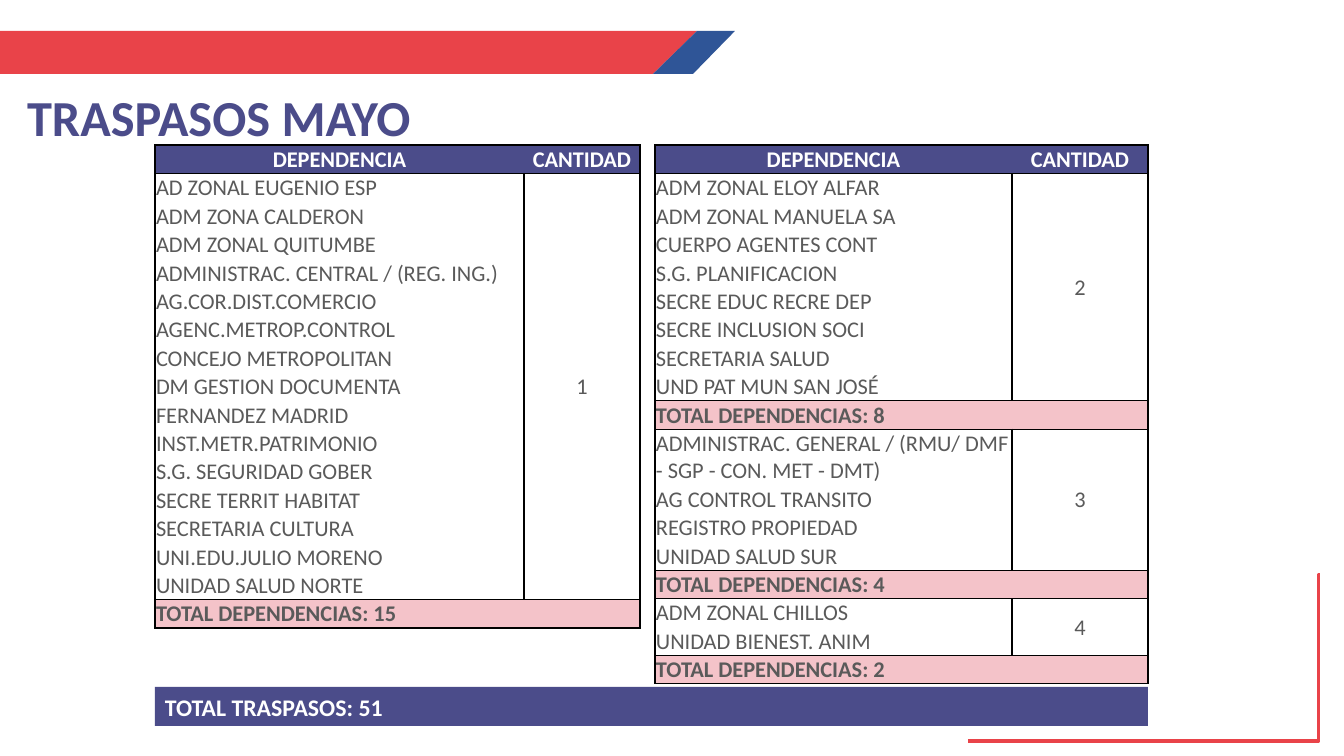
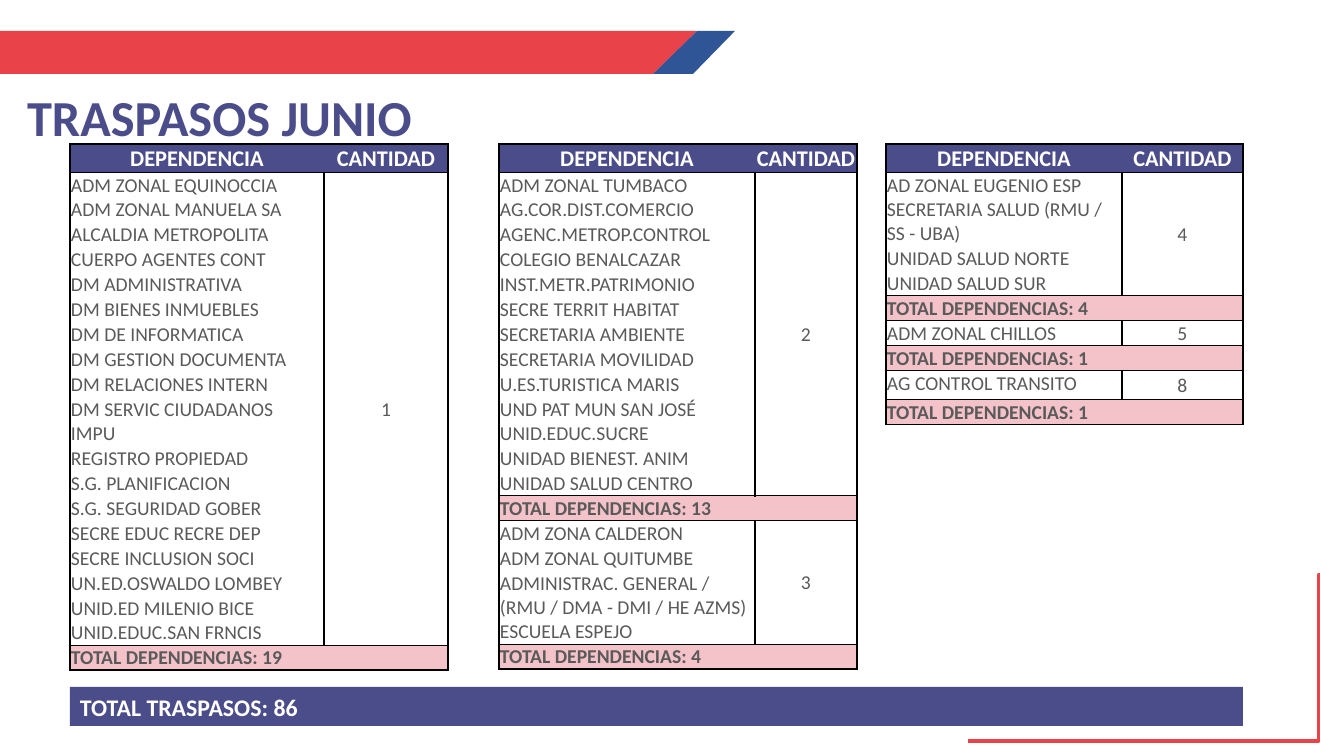
from lxml import etree
from pptx import Presentation
from pptx.dml.color import RGBColor
from pptx.enum.shapes import MSO_CONNECTOR, MSO_SHAPE
from pptx.enum.text import MSO_ANCHOR, MSO_AUTO_SIZE, PP_ALIGN
from pptx.oxml.ns import qn
from pptx.util import Pt

LEFT, CENTER = PP_ALIGN.LEFT, PP_ALIGN.CENTER
TOP, MIDDLE = MSO_ANCHOR.TOP, MSO_ANCHOR.MIDDLE
PX = 914400 / 100.8
FONT = "Calibri"
HUES = {
    "red": "E94349",
    "blue": "2F5597",
    "navy": "4B4C8A",
    "pink": "F4C3C9",
    "gray": "5A5A5A",
    "white": "FFFFFF",
    "black": "000000",
}

# Each table: left edge, column widths, groups of (quantity, names, row height if special)
MONTHS = [
    {
        "title": "TRASPASOS MAYO", "top": 145, "size": 16, "step": 28,
        "tables": [
            (155, (369, 116), [
                (1, ["AD ZONAL EUGENIO ESP", "ADM ZONA CALDERON", "ADM ZONAL QUITUMBE",
                     "ADMINISTRAC. CENTRAL / (REG. ING.)", "AG.COR.DIST.COMERCIO",
                     "AGENC.METROP.CONTROL", "CONCEJO METROPOLITAN", "DM GESTION DOCUMENTA",
                     "FERNANDEZ MADRID", "INST.METR.PATRIMONIO", "S.G. SEGURIDAD GOBER",
                     "SECRE TERRIT HABITAT", "SECRETARIA CULTURA", "UNI.EDU.JULIO MORENO",
                     "UNIDAD SALUD NORTE"]),
            ]),
            (655, (357, 136), [
                (2, ["ADM ZONAL ELOY ALFAR", "ADM ZONAL MANUELA SA", "CUERPO AGENTES CONT",
                     "S.G. PLANIFICACION", "SECRE EDUC RECRE DEP", "SECRE INCLUSION SOCI",
                     "SECRETARIA SALUD", "UND PAT MUN SAN JOSÉ"]),
                (3, ["ADMINISTRAC. GENERAL / (RMU/ DMF - SGP - CON. MET - DMT)",
                     "AG CONTROL TRANSITO", "REGISTRO PROPIEDAD", "UNIDAD SALUD SUR"]),
                (4, ["ADM ZONAL CHILLOS", "UNIDAD BIENEST. ANIM"]),
            ]),
        ],
    },
    {
        "title": "TRASPASOS JUNIO", "top": 144, "size": 14, "step": 24,
        "tables": [
            (70, (254, 124), [
                (1, ["ADM ZONAL EQUINOCCIA", "ADM ZONAL MANUELA SA", "ALCALDIA METROPOLITA",
                     "CUERPO AGENTES CONT", "DM ADMINISTRATIVA", "DM BIENES INMUEBLES",
                     "DM DE INFORMATICA", "DM GESTION DOCUMENTA", "DM RELACIONES INTERN",
                     "DM SERVIC CIUDADANOS", "IMPU", "REGISTRO PROPIEDAD",
                     "S.G. PLANIFICACION", "S.G. SEGURIDAD GOBER", "SECRE EDUC RECRE DEP",
                     "SECRE INCLUSION SOCI", "UN.ED.OSWALDO LOMBEY", "UNID.ED MILENIO BICE",
                     "UNID.EDUC.SAN FRNCIS"]),
            ]),
            (499, (256, 102), [
                (2, ["ADM ZONAL TUMBACO", "AG.COR.DIST.COMERCIO", "AGENC.METROP.CONTROL",
                     "COLEGIO BENALCAZAR", "INST.METR.PATRIMONIO", "SECRE TERRIT HABITAT",
                     "SECRETARIA AMBIENTE", "SECRETARIA MOVILIDAD", "U.ES.TURISTICA MARIS",
                     "UND PAT MUN SAN JOSÉ", "UNID.EDUC.SUCRE", "UNIDAD BIENEST. ANIM",
                     "UNIDAD SALUD CENTRO"]),
                (3, ["ADM ZONA CALDERON", "ADM ZONAL QUITUMBE",
                     "ADMINISTRAC. GENERAL / (RMU / DMA - DMI / HE AZMS)", "ESCUELA ESPEJO"]),
            ]),
            (886, (236, 121), [
                (4, ["AD ZONAL EUGENIO ESP", "SECRETARIA SALUD (RMU / SS - UBA)",
                     "UNIDAD SALUD NORTE", "UNIDAD SALUD SUR"]),
                (5, ["ADM ZONAL CHILLOS"]),
                (8, ["AG CONTROL TRANSITO"], 29),
            ]),
        ],
    },
]


def write(frame, text, size=16, hue="gray", bold=False, align=LEFT, space=None):
    frame.word_wrap = True
    para = frame.paragraphs[0]
    para.alignment = align
    para.line_spacing = space
    run = para.add_run()
    run.text = text
    run.font.name = FONT
    run.font.size = Pt(size)
    run.font.bold = bold
    run.font.color.rgb = RGBColor.from_string(HUES[hue])


def dress(cell, sides, fill="white", anchor=TOP):
    """Set a cell's margins, fill and the borders named in sides (L, R, T, B)."""
    cell.margin_left = cell.margin_right = cell.margin_top = round(PX)
    cell.margin_bottom = 0
    cell.vertical_anchor = anchor
    props = cell._tc.get_or_add_tcPr()
    for side in "LRTB":
        edge = etree.SubElement(props, qn(f"a:ln{side}"), w=str(Pt(1)))
        if side in sides:
            paint = etree.SubElement(edge, qn("a:solidFill"))
            etree.SubElement(paint, qn("a:srgbClr"), val=HUES["black"])
        else:
            etree.SubElement(edge, qn("a:noFill"))
    cell.fill.solid()
    cell.fill.fore_color.rgb = RGBColor.from_string(HUES[fill])


deck = Presentation()
deck.slide_width, deck.slide_height = round(1344 * PX), round(756 * PX)

# Layout: title place, top bands and corner line
base = deck.slide_layouts[5]
for hold in list(base.placeholders):
    if hold.placeholder_format.idx:
        hold.element.getparent().remove(hold.element)
    else:
        hold.left, hold.top, hold.width, hold.height = [
            round(n * PX) for n in (17, 88, 564, 56)]
pages = [deck.slides.add_slide(base) for month in MONTHS]

art = []
for hue, points in [
    ("red", [(0, 31), (697, 31), (653, 74), (0, 74)]),
    ("blue", [(697, 31), (735, 31), (693, 74), (653, 74)]),
]:
    pen = pages[0].shapes.build_freeform(*points[0], scale=PX)
    pen.add_line_segments(points[1:], close=True)
    band = pen.convert_to_shape()
    band.shadow.inherit = False
    band.fill.solid()
    band.fill.fore_color.rgb = RGBColor.from_string(HUES[hue])
    band.line.fill.background()
    art.append(band)

bend = pages[0].shapes.add_connector(
    MSO_CONNECTOR.ELBOW, *[round(n * PX) for n in (968, 741, 1320, 575)])
bend.line.color.rgb = RGBColor.from_string(HUES["red"])
bend.line.width = Pt(2.25)
props = bend.element.spPr
etree.SubElement(props, qn("a:effectLst"))
guides = props.find(qn("a:prstGeom")).find(qn("a:avLst"))
etree.SubElement(guides, qn("a:gd"), name="adj1", fmla="val 99600")
art.append(bend)
for shape in art:
    base.shapes.element.append(shape.element)

for page, month in zip(pages, MONTHS):
    title = page.shapes.title.text_frame
    title.auto_size = MSO_AUTO_SIZE.NONE
    title.vertical_anchor = TOP
    write(title, month["title"], size=36, hue="navy", bold=True, space=0.9)

    size, step = month["size"], month["step"]
    total = 0
    for left, widths, groups in month["tables"]:
        count = 1 + sum(len(group[1]) + 1 for group in groups)
        box = [round(n * PX) for n in (left, month["top"], sum(widths), count * step)]
        grid = page.shapes.add_table(count, 2, *box).table
        for col, width in zip(grid.columns, widths):
            col.width = round(width * PX)
        for row in grid.rows:
            row.height = round(step * PX)

        for col, (head, sides) in enumerate([("DEPENDENCIA", "LTB"), ("CANTIDAD", "RTB")]):
            cell = grid.cell(0, col)
            dress(cell, sides, "navy")
            write(cell.text_frame, head, hue="white", bold=True, align=CENTER)

        first = 1
        for num, names, *high in groups:
            last = first + len(names) - 1
            for at, name in enumerate(names, first):
                cell = grid.cell(at, 0)
                dress(cell, "LR" + "T" * (at == first) + "B" * (at == last))
                write(cell.text_frame, name, size=size)
                dress(grid.cell(at, 1), "LRTB", anchor=MIDDLE)
                if high:
                    grid.rows[at].height = round(high[0] * PX)
            cell = grid.cell(first, 1)
            if last > first:
                cell.merge(grid.cell(last, 1))
            write(cell.text_frame, str(num), size=size, align=CENTER)

            foot = [grid.cell(last + 1, col) for col in (0, 1)]
            for cell in foot:
                dress(cell, "LRTB", "pink")
            foot[0].merge(foot[1])
            write(foot[0].text_frame, f"TOTAL DEPENDENCIAS: {len(names)}", size=size, bold=True)
            total += num * len(names)
            first = last + 2

    start = month["tables"][0][0]
    end = left + sum(widths)
    bar = page.shapes.add_shape(
        MSO_SHAPE.RECTANGLE, *[round(n * PX) for n in (start, 687, end - start, 39)])
    bar.shadow.inherit = False
    bar.fill.solid()
    bar.fill.fore_color.rgb = RGBColor.from_string(HUES["navy"])
    bar.line.fill.background()
    bar.text_frame.vertical_anchor = MIDDLE
    write(bar.text_frame, f"TOTAL TRASPASOS: {total}", size=17, hue="white", bold=True)

deck.save("out.pptx")
